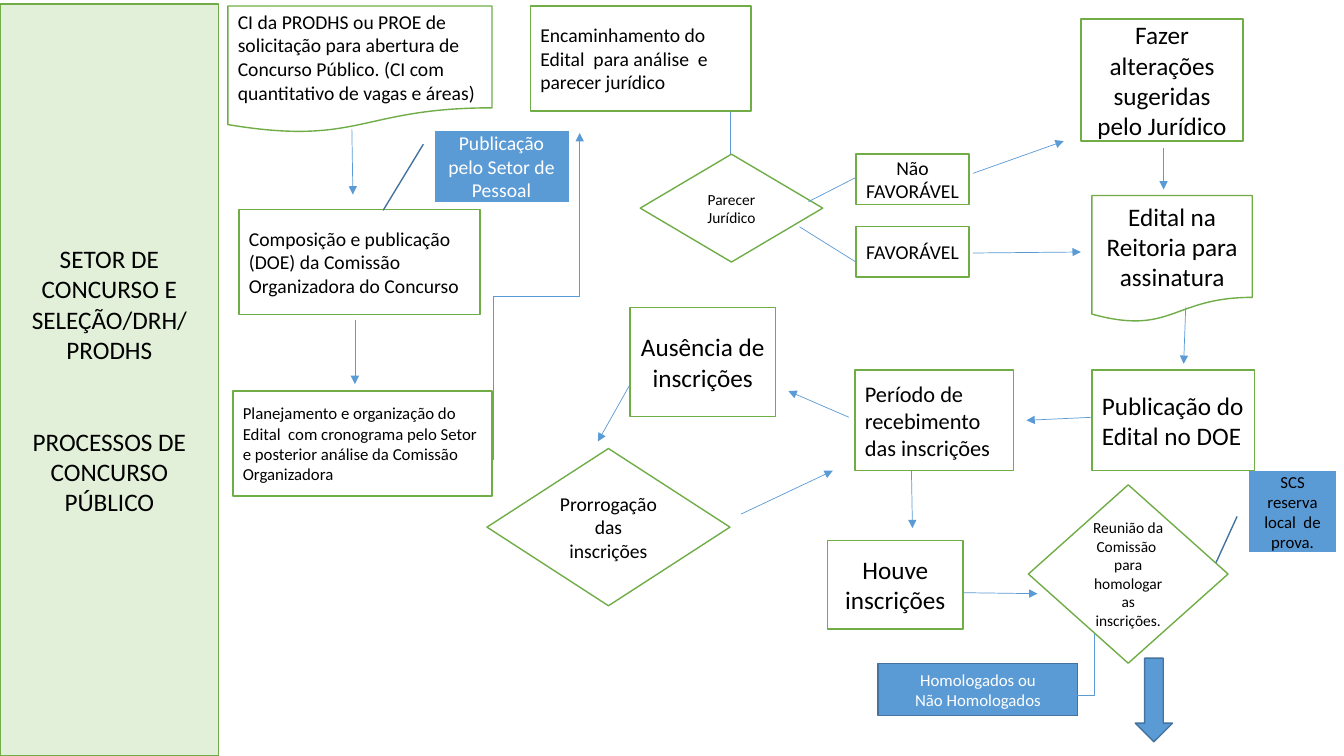
from dataclasses import dataclass

from lxml.etree import SubElement
from pptx import Presentation
from pptx.dml.color import RGBColor
from pptx.enum.shapes import MSO_CONNECTOR as Connector, MSO_SHAPE as Shape
from pptx.enum.text import MSO_ANCHOR as Anchor, MSO_AUTO_SIZE as AutoSize, PP_ALIGN as Align
from pptx.oxml.ns import qn
from pptx.util import Inches, Pt

COLORS = {
    "panel": "E2F0D9",
    "green": "70AD47",
    "blue": "5B9BD5",
    "dark_blue": "43739E",
    "white": "FFFFFF",
    "black": "000000",
}
STYLES = {
    "panel": ("panel", "green"),
    "step": ("white", "green"),
    "note": ("blue", "dark_blue"),
}
PROCESS = Shape.FLOWCHART_PROCESS
DECISION = Shape.FLOWCHART_DECISION
DOCUMENT = Shape.FLOWCHART_DOCUMENT
CALLOUT = Shape.LINE_CALLOUT_1_NO_BORDER
BOX = Shape.RECTANGLE


@dataclass(frozen=True)
class Node:
    kind: Shape
    box: tuple[float, float, float, float]
    text: str = ""
    size: int = 14
    align: Align = Align.CENTER
    style: str = "step"
    color: str = "black"
    adjustments: tuple[float, ...] = ()


@dataclass(frozen=True)
class Link:
    begin: tuple[float, float]
    end: tuple[float, float]
    arrow: bool = True
    bend: str = ""


PANEL = Node(
    PROCESS, (0, 0.04, 2.17, 7.46),
    "SETOR DE CONCURSO E SELEÇÃO/DRH/\nPRODHS\nPROCESSOS DE CONCURSO PÚBLICO", 18, style="panel",
)
NODES = [
    Node(BOX, (2.37, 2.08, 2.39, 1.04),
         "Composição e publicação (DOE) da Comissão Organizadora do Concurso", align=Align.LEFT),
    Node(PROCESS, (2.31, 3.88, 2.57, 1.04),
         "Planejamento e organização do Edital  com cronograma pelo Setor "
         "e posterior análise da Comissão Organizadora", 12, Align.LEFT),
    Node(PROCESS, (5.26, 0.06, 2.19, 1.04),
         "Encaminhamento do Edital  para análise  e parecer jurídico", align=Align.LEFT),
    Node(DOCUMENT, (2.26, 0.06, 2.62, 1.26),
         "CI da PRODHS ou PROE de solicitação para abertura de Concurso Público. "
         "(CI com quantitativo de vagas e áreas)", align=Align.LEFT),
    Node(DECISION, (6.35, 1.53, 1.81, 1.07), "Parecer Jurídico", 11),
    Node(BOX, (10.72, 0.19, 1.61, 1.21), "Fazer alterações sugeridas pelo Jurídico", 18),
    Node(BOX, (8.49, 2.25, 1.12, 0.5), "FAVORÁVEL"),
    Node(DOCUMENT, (10.83, 1.94, 1.59, 1.26), "Edital na Reitoria para assinatura", 18),
    Node(BOX, (8.49, 1.53, 1.12, 0.5), "Não\nFAVORÁVEL"),
    Node(BOX, (10.83, 3.67, 1.61, 1), "Publicação do Edital no DOE", 18, Align.LEFT),
    Node(BOX, (8.48, 3.67, 1.57, 1), "Período de  recebimento das inscrições", 16, Align.LEFT),
    Node(CALLOUT, (4.31, 1.3, 1.33, 0.7), "Publicação pelo Setor de Pessoal",
         style="note", color="white"),
    Node(BOX, (6.25, 3.05, 1.44, 1.08), "Ausência de inscrições", 18),
    Node(DECISION, (4.83, 4.45, 2.41, 1.56), "Prorrogação das inscrições"),
    Node(PROCESS, (8.21, 5.36, 1.34, 0.88), "Houve inscrições", 18),
    Node(DECISION, (10.2, 4.81, 1.98, 1.77),
         "Reunião da Comissão  para homologar as inscrições.", 11),
    Node(CALLOUT, (12.39, 4.67, 0.86, 0.81), "SCS reserva local  de prova.", 12,
         style="note", adjustments=(0.56, -0.14, 1.125, -0.383)),
    Node(PROCESS, (8.71, 6.58, 1.98, 0.52), "Homologados ou\nNão Homologados", 12,
         style="note", color="white"),
    Node(Shape.DOWN_ARROW, (11.26, 6.53, 0.37, 0.83), style="note"),
]
LINKS = [
    Link((3.49, 1.28), (3.5, 1.93)),
    Link((3.52, 3.17), (3.52, 3.81)),
    Link((4.89, 4.56), (5.75, 1.32), bend="bentConnector3"),
    Link((7.24, 1.11), (7.24, 1.53), arrow=False),
    Link((9.65, 1.72), (10.55, 1.4)),
    Link((11.54, 1.47), (11.54, 1.88)),
    Link((7.93, 2.25), (8.49, 2.6), arrow=False),
    Link((9.65, 2.51), (10.72, 2.5)),
    Link((8.02, 2), (8.49, 1.76), arrow=False),
    Link((11.76, 3.05), (11.74, 3.61)),
    Link((10.83, 4.14), (10.18, 4.17)),
    Link((8.42, 4.14), (7.82, 3.88)),
    Link((6.24, 3.83), (5.93, 4.38)),
    Link((9.04, 4.67), (9.05, 5.24)),
    Link((7.35, 5.1), (8.26, 4.67)),
    Link((9.56, 5.88), (10.29, 5.89)),
    Link((10.85, 6.29), (10.66, 6.9), arrow=False, bend="bentConnector2"),
]


def apply_format(target, values: dict) -> None:
    for name, value in values.items():
        setattr(target, name, value)


def rgb(name: str) -> RGBColor:
    return RGBColor.from_string(COLORS[name])


def format_node(shape, node: Node) -> None:
    fill, line = STYLES[node.style]
    shape.fill.solid()
    shape.fill.fore_color.rgb = rgb(fill)
    shape.line.color.rgb = rgb(line)
    shape.line.width = Pt(1)
    if not node.text:
        return
    frame = shape.text_frame
    frame.text = node.text
    apply_format(frame, {
        "word_wrap": True, "auto_size": AutoSize.NONE, "vertical_anchor": Anchor.MIDDLE,
    })
    for paragraph in frame.paragraphs:
        paragraph.alignment = node.align
        for run in paragraph.runs:
            apply_format(run.font, {"name": "Calibri", "size": Pt(node.size)})
            run.font.color.rgb = rgb(node.color)


def draw_panel(slide) -> None:
    title = slide.shapes.title
    lengths = map(Inches, PANEL.box)
    apply_format(title, dict(zip(("left", "top", "width", "height"), lengths)))
    format_node(title, PANEL)
    title.text_frame.paragraphs[-1].space_before = Pt(44)


def draw_node(slide, node: Node) -> None:
    shape = slide.shapes.add_shape(node.kind, *map(Inches, node.box))
    shape.shadow.inherit = False
    for index, value in enumerate(node.adjustments):
        shape.adjustments[index] = value
    format_node(shape, node)


def turn_back(point: tuple[float, float], center: tuple[float, float]) -> tuple[float, float]:
    return center[0] + point[1] - center[1], center[1] - point[0] + center[0]


def draw_link(slide, link: Link) -> None:
    begin, end = link.begin, link.end
    if link.bend:
        center = ((begin[0] + end[0]) / 2, (begin[1] + end[1]) / 2)
        begin, end = turn_back(begin, center), turn_back(end, center)
    kind = Connector.ELBOW if link.bend else Connector.STRAIGHT
    connector = slide.shapes.add_connector(kind, *map(Inches, begin + end))
    connector.line.color.rgb = rgb("blue")
    connector.line.width = Pt(0.5)
    properties = connector.element.spPr
    if link.bend:
        properties.find(qn("a:xfrm")).set("rot", "5400000")
        properties.find(qn("a:prstGeom")).set("prst", link.bend)
    if link.arrow:
        SubElement(properties.find(qn("a:ln")), qn("a:tailEnd"), type="triangle")
    SubElement(properties, qn("a:effectLst"))


def main() -> None:
    presentation = Presentation()
    apply_format(presentation, {"slide_width": Inches(13.33), "slide_height": Inches(7.5)})
    slide = presentation.slides.add_slide(presentation.slide_layouts[5])
    draw_panel(slide)
    for node in NODES:
        draw_node(slide, node)
    for link in LINKS:
        draw_link(slide, link)
    presentation.save("out.pptx")


if __name__ == "__main__":
    main()
